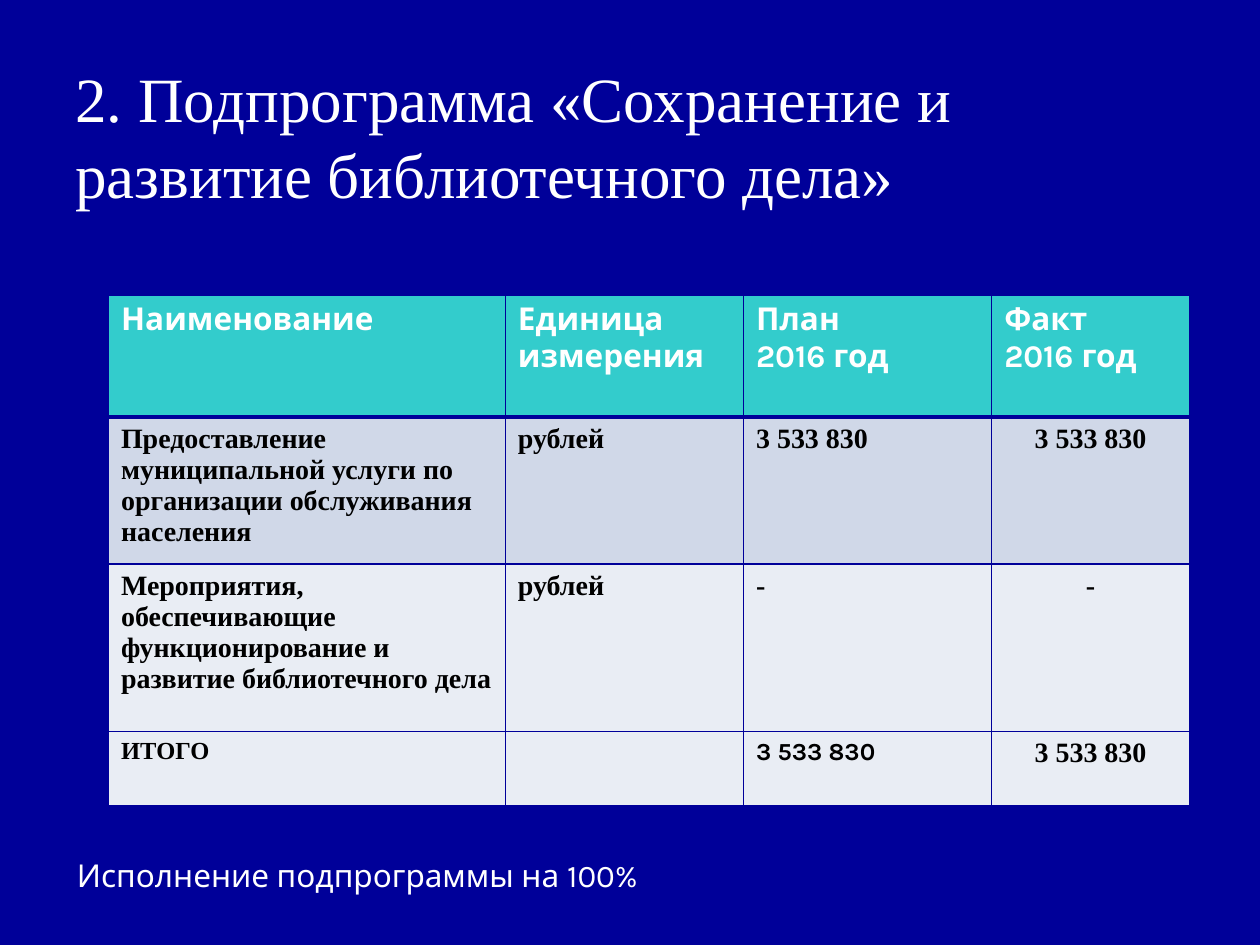
from lxml.etree import SubElement
from pptx import Presentation
from pptx.dml.color import RGBColor
from pptx.enum.text import MSO_ANCHOR as Anchor, PP_ALIGN as Align
from pptx.oxml.ns import qn
from pptx.util import Pt

NAVY = RGBColor(0x00, 0x00, 0x99)
TEAL = RGBColor(0x33, 0xCC, 0xCC)
BAND = RGBColor(0xD0, 0xD8, 0xE8)
PALE = RGBColor(0xE9, 0xED, 0xF4)
WHITE = RGBColor(0xFF, 0xFF, 0xFF)
BLACK = RGBColor(0x00, 0x00, 0x00)
SERIF, SANS = "Times New Roman", "Karla"

COLUMN_WIDTHS = (226.8, 136.1, 141.8, 113)
ROW_HEIGHTS = (69.6, 83, 95.8, 42.6)
ROW_FILLS = (TEAL, BAND, PALE, PALE)
BUDGET = (
    ("Наименование", "Единица измерения", "План\n2016 год", "Факт\n2016 год"),
    ("Предоставление муниципальной услуги по организации обслуживания населения",
     "рублей", "3 533 830", "3 533 830"),
    ("Мероприятия, обеспечивающие функционирование и развитие библиотечного дела",
     "рублей", "-", "-"),
    ("ИТОГО", "", "3 533 830", "3 533 830"),
)
HEADER_STYLE = (SANS, 18, WHITE)
BODY_STYLE = (SERIF, 16, BLACK)
TOTAL_STYLES = {0: (SERIF, 14, BLACK), 2: (SANS, 14, BLACK)}


def write_text(frame, text, style, bold=False, align=Align.LEFT):
    """Fill a text frame and format all of its runs alike."""
    name, size, color = style
    frame.text = text
    for paragraph in frame.paragraphs:
        paragraph.alignment = align
        for run in paragraph.runs:
            run.font.name = name
            run.font.size = Pt(size)
            run.font.bold = bold
            run.font.color.rgb = color


def add_text(slide, left, top, width, height, text, style, anchor=Anchor.TOP):
    """Add a wrapping text box."""
    box = slide.shapes.add_textbox(Pt(left), Pt(top), Pt(width), Pt(height))
    frame = box.text_frame
    frame.word_wrap = True
    frame.vertical_anchor = anchor
    write_text(frame, text, style)


def set_borders(cell, top, bottom):
    """Draw navy borders round a cell, with the given top and bottom weights."""
    properties = cell._tc.get_or_add_tcPr()
    for side, weight in (("L", 1), ("R", 1), ("T", top), ("B", bottom)):
        line = SubElement(properties, qn(f"a:ln{side}"), w=str(Pt(weight)))
        fill = SubElement(line, qn("a:solidFill"))
        SubElement(fill, qn("a:srgbClr"), val=str(NAVY))


def cell_style(row, column):
    """Return the font, size and colour of a cell."""
    if row == 0:
        return HEADER_STYLE
    if row == len(BUDGET) - 1:
        return TOTAL_STYLES.get(column, BODY_STYLE)
    return BODY_STYLE


def add_budget(slide, left, top):
    """Add the table of planned and actual spending."""
    table = slide.shapes.add_table(
        len(BUDGET), len(COLUMN_WIDTHS), Pt(left), Pt(top),
        Pt(sum(COLUMN_WIDTHS)), Pt(sum(ROW_HEIGHTS))).table
    for column, width in zip(table.columns, COLUMN_WIDTHS):
        column.width = Pt(width)
    last = len(COLUMN_WIDTHS) - 1
    for r, (texts, height, color) in enumerate(zip(BUDGET, ROW_HEIGHTS, ROW_FILLS)):
        table.rows[r].height = Pt(height)
        for c, text in enumerate(texts):
            cell = table.cell(r, c)
            set_borders(cell, 3 if r == 1 else 1, 3 if r == 0 else 1)
            cell.fill.solid()
            cell.fill.fore_color.rgb = color
            align = Align.CENTER if r and c == last else Align.LEFT
            write_text(cell.text_frame, text, cell_style(r, c), True, align)


def main():
    """Build and save the slide."""
    deck = Presentation()
    deck.slide_width, deck.slide_height = Pt(720), Pt(540)
    slide = deck.slides.add_slide(deck.slide_layouts[6])
    slide.background.fill.solid()
    slide.background.fill.fore_color.rgb = NAVY
    add_text(slide, 36, 23, 648, 108.7,
             "2. Подпрограмма «Сохранение и развитие библиотечного дела»",
             (SERIF, 36, WHITE), Anchor.MIDDLE)
    add_budget(slide, 62, 168.7)
    add_text(slide, 36.9, 485.5, 623.5, 29, "Исполнение подпрограммы на 100%",
             (SANS, 18, WHITE))
    deck.save("out.pptx")


if __name__ == "__main__":
    main()
